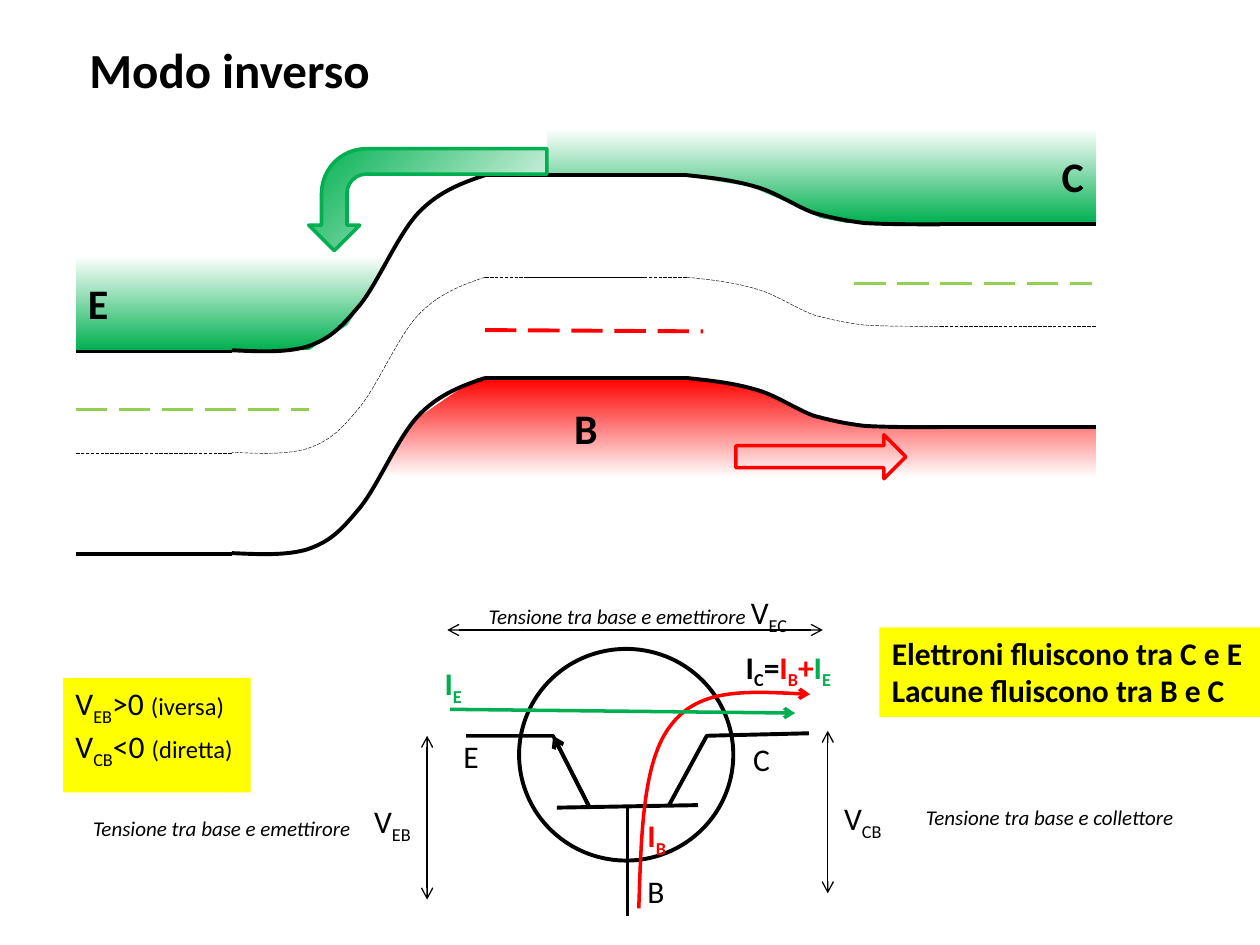
from dataclasses import dataclass
from typing import Any

from lxml import etree
from pptx import Presentation
from pptx import util as u
from pptx.dml import color as dml
from pptx.enum import dml as line_styles, shapes, text
from pptx.oxml import ns

COLORS = {"black": "000000", "white": "FFFFFF", "green": "00B050", "lime": "92D050",
          "red": "FF0000", "yellow": "FFFF00"}
LONG_DASH = line_styles.MSO_LINE.LONG_DASH


def rgb(name):
    """Return the named colour."""
    return dml.RGBColor.from_string(COLORS[name])


def stroke(shape, color, width, dash=None, ends=""):
    """Style an outline; ends lists which of head and tail carry an arrow."""
    shape.line.color.rgb = rgb(color)
    shape.line.width = u.Pt(width)
    if dash:
        shape.line.dash_style = dash
    for end in ends.split():
        etree.SubElement(shape.get_or_add_ln(), ns.qn(f"a:{end}End"), type="arrow")


def fade(shape, color, angle):
    """Fill with a gradient from a colour to white."""
    shape.fill.gradient()
    shape.fill.gradient_angle = angle
    for stop, name in zip(shape.fill.gradient_stops, (color, "white")):
        stop.color.rgb = rgb(name)


def write(shape, paragraphs, size=18, color="black", bold=False, italic=False,
          align=text.PP_ALIGN.LEFT, anchor=text.MSO_ANCHOR.TOP, wrap=False):
    """Write paragraphs of (words, style) runs."""
    frame = shape.text_frame
    frame.word_wrap = wrap
    frame.vertical_anchor = anchor
    for i, runs in enumerate(paragraphs):
        paragraph = frame.add_paragraph() if i else frame.paragraphs[0]
        paragraph.alignment = align
        font = paragraph.font
        font.name, font.size, font.bold, font.italic = "Calibri", u.Pt(size), bold, italic
        font.color.rgb = rgb(color)
        for words, style in runs:
            run = paragraph.add_run()
            run.text = words
            if "size" in style:
                run.font.size = u.Pt(style["size"])
            if "italic" in style:
                run.font.italic = style["italic"]
            if "color" in style:
                run.font.color.rgb = rgb(style["color"])
            if style.get("sub"):
                run._r.get_or_add_rPr().set("baseline", "-25000")


def plain(words):
    """Return one paragraph made of a single run."""
    return [[(words, {})]]


def symbol(letter, index, **style):
    """Return the runs of a letter with a subscript."""
    return [(letter, style), (index, {**style, "sub": True})]


@dataclass
class Region:
    """A part of the slide whose contents are placed from its top left corner."""
    owner: Any
    left: float
    top: float

    def group(self, dy=0):
        """Open a group of shapes, shifted down by dy."""
        return Region(self.owner.shapes.add_group_shape(), self.left, self.top + dy)

    def at(self, x, y):
        """Convert local inches to a slide position."""
        return u.Inches(self.left + x), u.Inches(self.top + y)

    def line(self, start, end, color="black", width=2.25, dash=None, ends=""):
        """Draw a straight connector."""
        connector = self.owner.shapes.add_connector(
            shapes.MSO_CONNECTOR.STRAIGHT, *self.at(*start), *self.at(*end))
        stroke(connector, color, width, dash, ends)
        etree.SubElement(connector.element.spPr, ns.qn("a:effectLst"))

    def outline(self, points, close=False):
        """Draw an unfilled freeform through points."""
        builder = self.owner.shapes.build_freeform(*self.at(*points[0]))
        builder.add_line_segments([self.at(*point) for point in points[1:]], close=close)
        freeform = builder.convert_to_shape()
        freeform.shadow.inherit = False
        freeform.fill.background()
        return freeform

    def curve(self, points):
        """Draw cubic curves given as start, then control, control, end."""
        freeform = self.outline(points)
        track = next(freeform.element.iter(ns.qn("a:path")))
        for i, segment in enumerate(track.findall(ns.qn("a:lnTo"))):
            if i % 3 == 0:
                cubic = etree.SubElement(track, ns.qn("a:cubicBezTo"))
            cubic.append(segment[0])
            track.remove(segment)
        return freeform

    def shape(self, kind, x, y, width, height):
        """Draw a preset shape without fill or line."""
        preset = self.owner.shapes.add_shape(
            kind, *self.at(x, y), u.Inches(width), u.Inches(height))
        preset.shadow.inherit = False
        preset.fill.background()
        preset.line.fill.background()
        return preset

    def label(self, x, y, width, height, paragraphs, **style):
        """Add a text box."""
        box = self.owner.shapes.add_textbox(
            *self.at(x, y), u.Inches(width), u.Inches(height))
        write(box, paragraphs, **style)

    def note(self, x, y, width, height, paragraphs, **style):
        """Add a yellow note."""
        box = self.shape(shapes.MSO_SHAPE.RECTANGLE, x, y, width, height)
        box.fill.solid()
        box.fill.fore_color.rgb = rgb("yellow")
        write(box, paragraphs, **style)


def add_title(slide, left, top):
    """Place the slide title."""
    title = slide.shapes.title
    title.left, title.top, title.width, title.height = map(u.Inches, (left, top, 2.45, 0.57))
    write(title, plain("Modo inverso"), size=28, bold=True)


def add_carriers(region):
    """Draw the carrier clouds and trim them along the band edges."""
    align = text.PP_ALIGN
    for name, x, y, width, height, color, angle, side in (
            ("E", 0, 1.03, 4.36, 0.75, "green", 90, align.LEFT),
            ("C", 3.74, 0.02, 4.36, 0.75, "green", 90, align.RIGHT),
            ("B", 0, 2, 8.1, 0.79, "red", 270, align.CENTER)):
        cloud = region.shape(shapes.MSO_SHAPE.RECTANGLE, x, y, width, height)
        fade(cloud, color, angle)
        write(cloud, plain(name), size=24, bold=True, align=side,
              anchor=text.MSO_ANCHOR.MIDDLE, wrap=True)
    for corners in (
            [(4.9, 2), (8.16, 2), (8.16, 2.4), (6.37, 2.4), (6.04, 2.35), (5.82, 2.3),
             (5.64, 2.19), (5.46, 2.1), (5.17, 2.05)],
            [(3.24, 1.97), (-0.02, 1.97), (-0.02, 3.41), (1.77, 3.41), (2.1, 3.21),
             (2.31, 3.04), (2.5, 2.65), (2.68, 2.34), (2.97, 2.14)],
            [(6.33, 0.79), (3.39, 0.79), (3.38, 0.41), (4.85, 0.4), (5.35, 0.48),
             (5.73, 0.64), (5.91, 0.73), (6.23, 0.79)],
            [(1.74, 1.78), (4.68, 1.78), (4.69, 0.42), (3.22, 0.39), (2.72, 0.68),
             (2.35, 1.27), (2.16, 1.58), (1.85, 1.78)]):
        mask = region.outline(corners, close=True)
        mask.fill.solid()
        mask.fill.fore_color.rgb = rgb("white")
        mask.line.fill.background()


def add_band(region, level, width, dash):
    """Draw one energy level across emitter, base and collector."""
    emitter_bend = [(3.25, 0), (3.07, 0.06), (2.88, 0.13), (2.72, 0.3), (2.55, 0.48),
                    (2.39, 0.88), (2.24, 1.05), (2.09, 1.23), (2.01, 1.3), (1.84, 1.36),
                    (1.67, 1.41), (1.46, 1.4), (1.24, 1.39)]
    collector_bend = [(4.85, 0), (5.04, 0.02), (5.22, 0.04), (5.39, 0.09), (5.55, 0.13),
                      (5.72, 0.25), (5.86, 0.3), (6.01, 0.34), (6.1, 0.36), (6.26, 0.38),
                      (6.43, 0.39), (6.65, 0.39), (6.86, 0.39)]
    for bend, outer, inner in ((emitter_bend, (0, 1.4), 4.53),
                               (collector_bend, (8.1, 0.39), 3.58)):
        side = region.group(level)
        stroke(side.curve(bend), "black", width, dash)
        side.line((bend[-1][0], outer[1]), outer, width=width, dash=dash)
        side.line(bend[0], (inner, 0), width=width, dash=dash)


def add_band_diagram(slide, left, top):
    """Draw the energy bands with carriers, Fermi levels and flow arrows."""
    region = Region(slide, left, top)
    add_carriers(region)
    for level, width, dash in ((2, 2.25, None), (1.2, 0.25, LONG_DASH), (0.39, 2.25, None)):
        add_band(region, level, width, dash)
    for start, end, color in (((6.18, 1.25), (8.07, 1.25), "lime"),
                              ((0, 2.25), (1.85, 2.25), "lime"),
                              ((3.25, 1.62), (4.98, 1.63), "red")):
        region.line(start, end, color, dash=LONG_DASH)
    electrons = region.shape(shapes.MSO_SHAPE.BENT_ARROW, 2.39, -0.36, 0.81, 1.89)
    electrons.rotation = 270
    electrons.element.spPr.xfrm.set("flipH", "1")
    fade(electrons, "green", 315)
    stroke(electrons, "green", 2)
    holes = region.shape(shapes.MSO_SHAPE.LEFT_ARROW, 5.24, 2.45, 1.35, 0.35)
    holes.element.spPr.xfrm.set("flipH", "1")
    stroke(holes, "red", 2)


def add_symbol(region):
    """Draw the transistor symbol with its terminal names."""
    stroke(region.outline([(1.91, 1.39), (2.21, 0.84), (3.02, 0.82)]), "black", 2.25)
    region.line((1.02, 1.41), (2.14, 1.39))
    region.line((1.58, 1.39), (1.58, 2.27))
    stroke(region.shape(shapes.MSO_SHAPE.OVAL, 0.72, 0.15, 1.7, 1.68), "black", 2.25)
    for name, x, y in (("E", 0.18, 0.8), ("C", 2.48, 0.82), ("B", 1.64, 1.87)):
        region.label(x, y, 0.33, 0.49, plain(name))
    stroke(region.outline([(1.28, 1.41), (0.99, 0.84), (0.3, 0.84)]), "black", 2)
    region.line((1.28, 1.41), (0.99, 0.84), ends="tail")


def add_transistor(slide, left, top):
    """Draw the transistor with its voltages and currents."""
    region = Region(slide, left, top)
    add_symbol(region.group())
    for start, end in (((-0.01, 0.84), (-0.01, 2.14)), ((3.17, 0.8), (3.17, 2.09)),
                       ((3.13, 0), (0.15, 0))):
        region.line(start, end, width=0.75, ends="head tail")
    for index, x, y in (("CB", 3.2, 1.29), ("EB", -0.53, 1.32)):
        region.label(x, y, 0.52, 0.4, [symbol("V", index)], wrap=True)
    for words, x, y in (("Tensione tra base e collettore", 3.85, 1.34),
                        ("Tensione tra base e emettirore", -2.76, 1.42)):
        region.label(x, y, 2.28, 0.3, plain(words), size=12, italic=True, wrap=True)
    region.label(0.38, -0.34, 3.16, 0.61,
                 [[("Tensione tra base e emettirore ", {}),
                   *symbol("V", "EC", size=18, italic=False)]],
                 size=12, italic=True, wrap=True)

    base_current = region.curve([(1.67, 2.21), (1.69, 1.62), (1.7, 1.03), (1.93, 0.75),
                                 (2.15, 0.46), (2.59, 0.49), (3.03, 0.51)])
    stroke(base_current, "red", 2, ends="tail")
    stroke(region.outline([(0.17, 0.63), (2.91, 0.66)]), "green", 2, ends="tail")
    emitter, base = symbol("I", "E", color="green"), symbol("I", "B", color="red")
    total = [*symbol("I", "C"), ("=", {}), *base, ("+", {"color": "red"}), *emitter]
    for runs, x, y, width in ((emitter, 0.03, 0.22, 0.35), (base, 1.64, 1.43, 0.36),
                              (total, 2.42, 0.09, 0.92)):
        region.label(x, y, width, 0.4, [runs], bold=True)


def add_notes(slide, left, top):
    """Place the bias conditions and the carrier flows."""
    region = Region(slide, left, top)
    region.note(0, 0.4, 1.49, 0.91,
                [[*symbol("V", index), (sign, {}), (bias, {"size": 14})]
                 for index, sign, bias in (("EB", ">0 ", "(iversa)"), ("CB", "<0 ", "(diretta)"))])
    region.note(6.48, 0, 3.02, 0.71,
                plain("Elettroni fluiscono tra C e E") + plain("Lacune fluiscono tra B e C"),
                bold=True)


def main():
    """Build the slide."""
    deck = Presentation()
    deck.slide_width, deck.slide_height = u.Inches(10), u.Inches(7.5)
    slide = deck.slides.add_slide(deck.slide_layouts[5])
    add_title(slide, 0.61, 0.26)
    add_band_diagram(slide, 0.6, 1)
    add_transistor(slide, 3.4, 5)
    add_notes(slide, 0.5, 4.98)
    deck.save("out.pptx")


if __name__ == "__main__":
    main()
